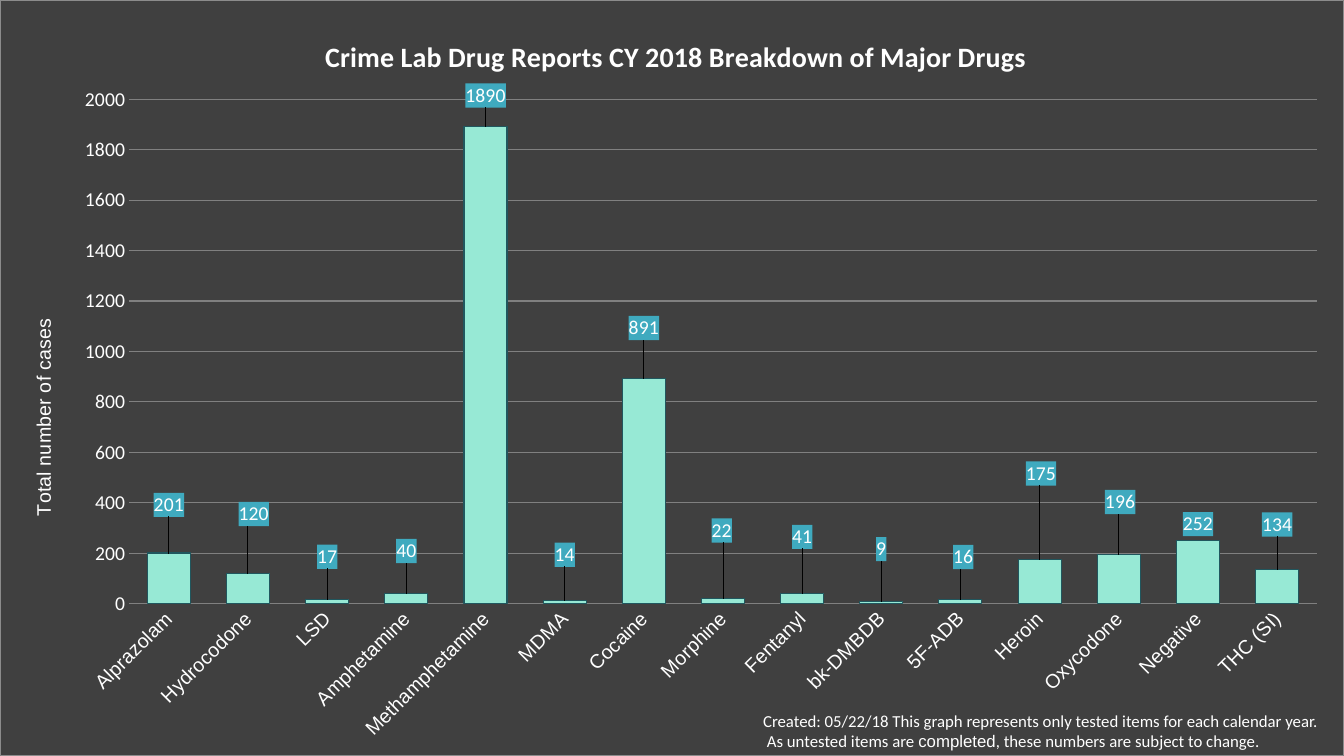
from pptx import Presentation, util as u
from pptx.chart.data import CategoryChartData
from pptx.dml.color import RGBColor
from pptx.enum import chart as ec
from pptx.oxml import parse_xml
from pptx.oxml.ns import nsdecls

WIDE, HIGH = 960, 540
WHITE = "FFFFFF"
# drug, cases, label shift right and down in points
DRUGS = [
    ("Alprazolam", 201, 0, -23), ("Hydrocodone", 120, 4, -31),
    ("LSD", 17, 0, -19), ("Amphetamine", 40, 0, -19),
    ("Methamphetamine", 1890, 0, -11), ("MDMA", 14, 0, -21),
    ("Cocaine", 891, 0, -25), ("Morphine", 22, -1, -37),
    ("Fentanyl", 41, 0, -29), ("bk-DMBDB", 9, 0, -26),
    ("5F-ADB", 16, 2, -19), ("Heroin", 175, 1, -50),
    ("Oxycodone", 196, 1, -26), ("Negative", 252, 0, 0),
    ("THC (SI)", 134, 0, -21),
]
NOTE = [
    [("Created: 05/22/18 This graph represents only tested items "
      "for each calendar year.", "Calibri")],
    [(" As untested items are ", "Calibri"), ("completed", "Arial"),
     (", these numbers are subject to change.", "Calibri")],
]


def rgb(code):
    return RGBColor.from_string(code)


def style(font, **form):
    font.color.rgb = rgb(WHITE)
    for key, val in form.items():
        setattr(font, key, val)


def box_style(fill, line=""):
    """Return chart shape properties with a solid fill and a thin line."""
    edge = f'<a:solidFill><a:srgbClr val="{line}"/></a:solidFill>' if line else "<a:noFill/>"
    return parse_xml(
        f'<c:spPr {nsdecls("c", "a")}><a:solidFill><a:srgbClr val="{fill}"/>'
        f'</a:solidFill><a:ln w="6350">{edge}</a:ln></c:spPr>')


def place(part, slot, **sides):
    """Give a chart part a manual layout; sides are chart fractions."""
    for old in part.xpath("c:layout"):
        part.remove(old)
    tags = ""
    if "w" in sides:
        tags += '<c:layoutTarget val="inner"/>'
    if part.tag.endswith(("plotArea", "title")):
        tags += '<c:xMode val="edge"/><c:yMode val="edge"/>'
    tags += "".join(f'<c:{k} val="{v:.4f}"/>' for k, v in sides.items())
    part.insert(slot, parse_xml(
        f'<c:layout {nsdecls("c")}><c:manualLayout>{tags}'
        '</c:manualLayout></c:layout>'))


def add_title(owner, words, x, y, **form):
    frame = owner.text_frame
    frame.text = words
    style(frame.paragraphs[0].runs[0].font, **form)
    place(frame._txBody.xpath("ancestor::c:title")[0], 1, x=x, y=y)


def format_axes(chart):
    cat, val = chart.category_axis, chart.value_axis
    for axis, face in ((cat, "Arial"), (val, "Calibri")):
        style(axis.tick_labels.font, size=u.Pt(14), name=face)
        axis.major_tick_mark = ec.XL_TICK_MARK.NONE
        axis.format.line.fill.background()
    cat._element.xpath("c:txPr/a:bodyPr")[0].set("rot", "-2700000")
    for key, num in dict(minimum_scale=0, maximum_scale=2000, major_unit=200).items():
        setattr(val, key, num)
    grid = val.major_gridlines.format.line
    grid.color.rgb, grid.width = rgb("808080"), u.Pt(0.75)
    add_title(val.axis_title, "Total number of cases", 0.02, 0.417,
              size=u.Pt(14), name="Arial", bold=False)


def format_bars(plot, wide, high):
    plot.gap_width, plot.vary_by_categories = 84, False
    bars = plot.series[0]
    bars.format.fill.solid()
    bars.format.fill.fore_color.rgb = rgb("97E9D5")
    bars.format.line.color.rgb, bars.format.line.width = rgb("20575E"), u.Pt(0.75)
    labels = bars.data_labels
    labels.show_value = True
    shifts = [(i, dx, dy) for i, (_, _, dx, dy) in enumerate(DRUGS) if dx or dy]
    for label in [labels] + [bars.points[i].data_label for i, _, _ in shifts]:
        style(label.font, size=u.Pt(14), name="Calibri")
        label.position = ec.XL_LABEL_POSITION.OUTSIDE_END
    root = bars._element
    for i, dx, dy in shifts:
        part = root.xpath(f"c:dLbls/c:dLbl[c:idx/@val='{i}']")[0]
        place(part, 1, x=dx / wide, y=dy / high)
    for text in root.xpath("c:dLbls//c:txPr"):
        text.addprevious(box_style("3FAABF"))


def add_cases(slide, left, top, wide, high):
    data = CategoryChartData()
    data.categories = [row[0] for row in DRUGS]
    data.add_series("Series 1", [row[1] for row in DRUGS])
    chart = slide.shapes.add_chart(
        ec.XL_CHART_TYPE.COLUMN_CLUSTERED,
        *map(u.Pt, (left, top, wide, high)), data).chart
    chart.has_legend = False
    style(chart.font, size=u.Pt(10), name="Calibri")
    add_title(chart.chart_title, "Crime Lab Drug Reports CY 2018 Breakdown of Major Drugs",
              0.238, 0.042, size=u.Pt(20), name="Calibri", bold=True)
    format_axes(chart)
    format_bars(chart.plots[0], wide, high)
    space = chart._chartSpace
    place(space.xpath("c:chart/c:plotArea")[0], 0, x=0.096, y=0.131, w=0.884, h=0.668)
    space.xpath("c:chart")[0].addnext(box_style("404040", "8C8C8C"))


def add_note(slide, left, top, wide, high):
    frame = slide.shapes.add_textbox(*map(u.Pt, (left, top, wide, high))).text_frame
    frame.word_wrap = True
    for i, runs in enumerate(NOTE):
        para = frame.add_paragraph() if i else frame.paragraphs[0]
        for words, face in runs:
            run = para.add_run()
            run.text = words
            style(run.font, size=u.Pt(12), name=face)


def main():
    deck = Presentation()
    deck.slide_width, deck.slide_height = u.Pt(WIDE), u.Pt(HIGH)
    slide = deck.slides.add_slide(deck.slide_layouts[6])
    back = slide.background.fill
    back.solid()
    back.fore_color.rgb = rgb("000000")
    add_cases(slide, 0, 0, WIDE, HIGH)
    add_note(slide, 538, 504, WIDE - 538, HIGH - 504)
    deck.save("out.pptx")


if __name__ == "__main__":
    main()
